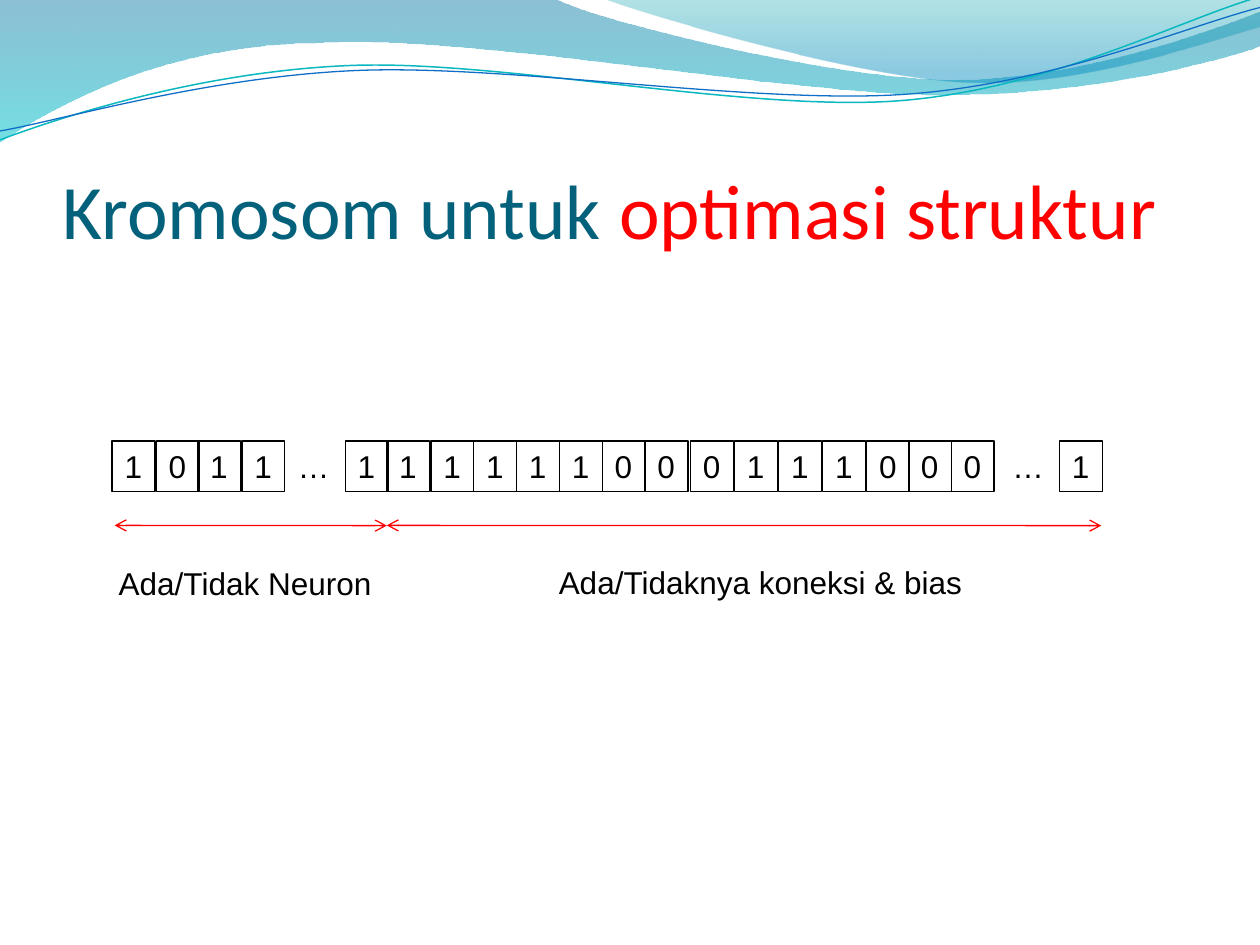
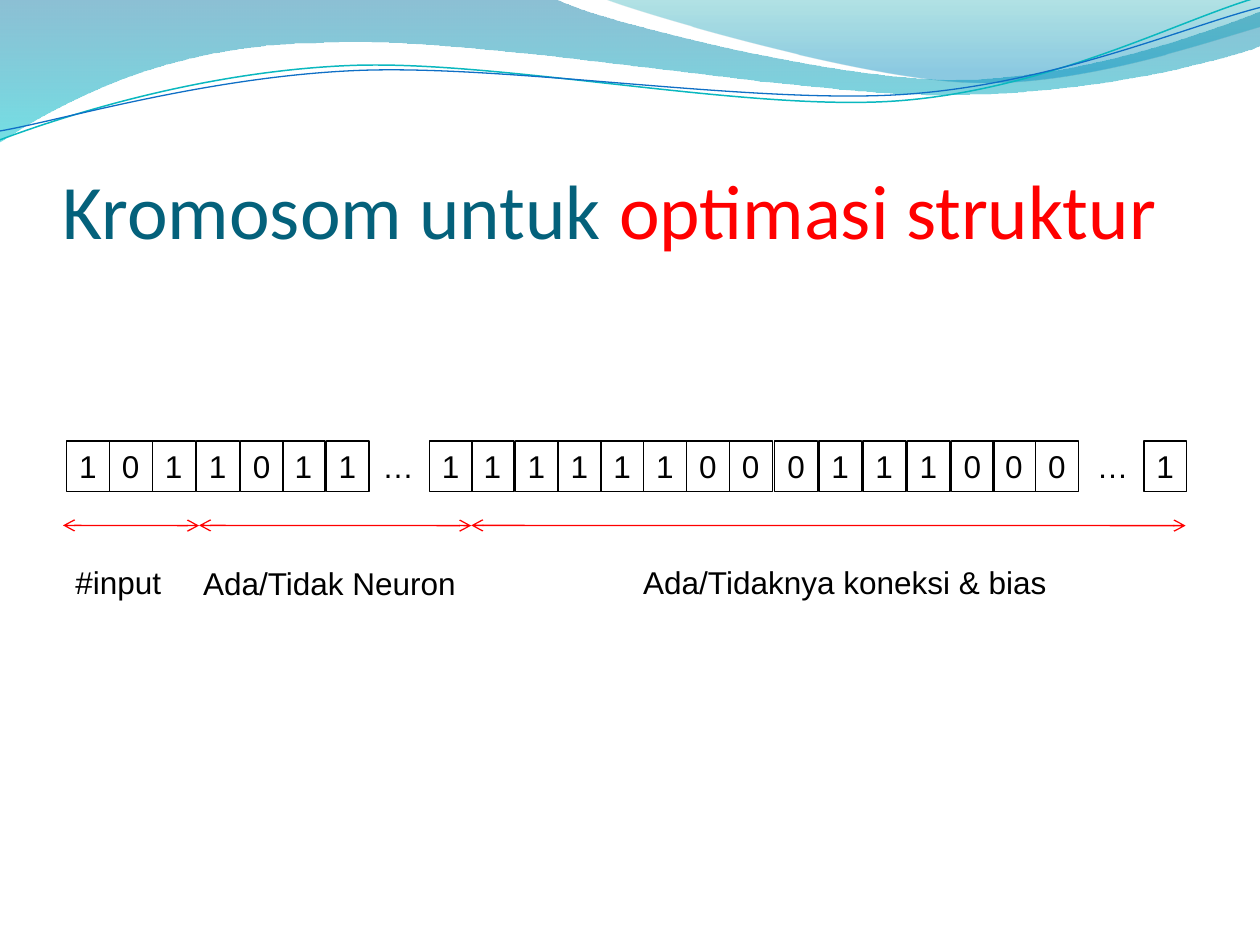
from math import cos, radians, sin

from lxml import etree
from pptx import Presentation
from pptx.dml.color import RGBColor
from pptx.enum.shapes import MSO_CONNECTOR, MSO_SHAPE
from pptx.enum.text import MSO_ANCHOR, MSO_AUTO_SIZE, PP_ALIGN
from pptx.oxml.ns import qn
from pptx.util import Inches, Pt

RECTANGLE = MSO_SHAPE.RECTANGLE
STRAIGHT = MSO_CONNECTOR.STRAIGHT
TOP, BOTTOM = MSO_ANCHOR.TOP, MSO_ANCHOR.BOTTOM
LEFT, CENTER = PP_ALIGN.LEFT, PP_ALIGN.CENTER
FIT_TEXT = MSO_AUTO_SIZE.SHAPE_TO_FIT_TEXT

BLACK = RGBColor(0x00, 0x00, 0x00)
RED = RGBColor(0xFF, 0x00, 0x00)
TITLE_TEAL = RGBColor(0x04, 0x61, 0x7B)
DEEP_BLUE = RGBColor(0x00, 0x74, 0xA1)
TURQUOISE = RGBColor(0x00, 0xC6, 0xCF)
SEA_GREEN = RGBColor(0x00, 0xA1, 0xA9)
SKY_BLUE = RGBColor(0x00, 0x8B, 0xBF)
LINE_TEAL = RGBColor(0x0A, 0xB8, 0xBF)
LINE_BLUE = RGBColor(0x0F, 0x6F, 0xC6)

TITLE = [("Kromosom untuk ", TITLE_TEAL), ("optimasi struktur", RED)]

# Outlines: a start point, then line ends (2 numbers) or Bezier curves (6 numbers).
# Gradient stops: position, colour, opacity in percent.
WAVE_BANDS = [
    ([(0, -0.01), (4.4, -0.01), (4.76, 0.17, 6.64, 0.63, 7.58, 0.63),
      (8.53, 0.63, 9.58, 0.26, 10, 0.09), (10.01, 0.36),
      (9.83, 0.44, 8.7, 0.76, 7.46, 0.75), (6.22, 0.75, 3.82, 0.28, 2.57, 0.34),
      (1.29, 0.35, 0.46, 0.83, -0.01, 1.13), (0, -0.01)],
     [(0, DEEP_BLUE, 45), (1, TURQUOISE, 55)]),
    ([(4.79, -0.01), (5.09, 0.11, 6.82, 0.62, 7.69, 0.65),
      (8.56, 0.69, 9.61, 0.32, 10, 0.21), (10, 0), (4.79, -0.01)],
     [(0, SEA_GREEN, 30), (0.8, SKY_BLUE, 45)]),
]
WAVE_LINES = [  # outline, centre of rotation, colour, width
    ([(0, 1.11), (0.48, 0.93, 1.58, 0.57, 2.77, 0.52),
      (3.95, 0.47, 5.93, 0.89, 7.13, 0.8), (8.33, 0.71, 9.38, 0.15, 9.98, -0.02)],
     (4.99, 0.57), LINE_TEAL, 0.85),
    ([(0, 1.04), (0.47, 0.96, 1.64, 0.61, 2.83, 0.56),
      (4.03, 0.51, 5.97, 0.83, 7.17, 0.75), (8.36, 0.67, 9.41, 0.21, 10, 0.06)],
     (5, 0.59), LINE_BLUE, 0.75),
]
WAVE_TILT = -2.7

# All x values count from the first neuron gene.
NEURON_AND_CONNECTION = {
    "genes": [  # start, pitch, bits
        (0, 0.35, "10"),
        (0.68, 0.35, "11"),
        (1.85, 0.33, "11"),
        (2.53, 0.34, "11110"),
        (4.23, 0.36, "00"),
        (4.94, 0.35, "1110"),
        (6.32, 0.34, "00"),
        (7.52, 0.34, "1"),
    ],
    "ellipses": [1.35, 7.02],
    "spans": [(0.02, 2.18), (2.18, 7.85)],
    "labels": [  # left, top, width, text, alignment
        (-0.07, 4.43, 2.25, "Ada/Tidak Neuron", CENTER),
        (2.77, 4.42, 4.75, "Ada/Tidaknya koneksi & bias", CENTER),
    ],
}
INPUT = {
    "genes": [(-1.03, 0.34, "101")],
    "ellipses": [],
    "spans": [(-1.06, 0.02)],
    "labels": [(-1.06, 4.42, 1.08, "#input", LEFT)],
}
SLIDES = [  # x of the first neuron gene, chromosome parts
    (0.89, [NEURON_AND_CONNECTION]),
    (1.56, [NEURON_AND_CONNECTION, INPUT]),
]

GENE_TOP, GENE_WIDTH, ROW_HEIGHT = 3.5, 0.34, 0.4
ELLIPSIS_WIDTH = 0.5
ARROW_TOP, ARROW_DROP = Inches(4.17), Pt(0.12)


def rotate(point, center, degrees):
    angle = radians(degrees)
    x, y = point[0] - center[0], point[1] - center[1]
    return (center[0] + x * cos(angle) - y * sin(angle),
            center[1] + x * sin(angle) + y * cos(angle))


def add_outline(slide, outline, center=(0, 0), tilt=0):
    """Draw the outline; a tilted one is stored level and then rotated."""
    segments = [list(zip(segment[::2], segment[1::2])) for segment in outline]
    points = [rotate(point, center, -tilt) for segment in segments for point in segment]
    points = [(Inches(x), Inches(y)) for x, y in points]
    builder = slide.shapes.build_freeform(*points[0])
    builder.add_line_segments(points[1:], close=outline[0] == outline[-1])
    shape = builder.convert_to_shape()
    shape.shadow.inherit = False
    shape.rotation = tilt % 360

    line_ends = iter(list(shape.element.spPr.iter(qn("a:lnTo"))))
    for segment in segments[1:]:
        steps = [next(line_ends) for _ in segment]
        if len(steps) == 3:
            curve = etree.Element(qn("a:cubicBezTo"))
            steps[0].addprevious(curve)
            for step in steps:
                curve.append(step[0])
                step.getparent().remove(step)
    return shape


def add_waves(slide):
    for outline, stops in WAVE_BANDS:
        band = add_outline(slide, outline)
        band.line.fill.background()
        band.fill.gradient()
        band.fill.gradient_angle = 270
        for stop, (position, color, _) in zip(band.fill.gradient_stops, stops):
            stop.position = position
            stop.color.rgb = color
        colors = band.element.spPr.iter(qn("a:srgbClr"))
        for color_element, (_, _, opacity) in zip(colors, stops):
            etree.SubElement(color_element, qn("a:alpha"), val=str(opacity * 1000))
    for outline, center, color, width in WAVE_LINES:
        wave = add_outline(slide, outline, center, WAVE_TILT)
        wave.fill.background()
        wave.line.color.rgb = color
        wave.line.width = Pt(width)


def write(shape, runs, size, font, alignment):
    paragraph = shape.text_frame.paragraphs[0]
    paragraph.alignment = alignment
    for text, color in runs:
        run = paragraph.add_run()
        run.text = text
        run.font.size = Pt(size)
        run.font.name = font
        run.font.color.rgb = color


def add_title(slide):
    title = slide.shapes.add_textbox(Inches(0.5), Inches(0.77), Inches(9), Inches(1.25))
    frame = title.text_frame
    frame.word_wrap = True
    frame.vertical_anchor = BOTTOM
    frame.margin_left = frame.margin_right = frame.margin_bottom = 0
    write(title, TITLE, 44, "Calibri", LEFT)


def add_label(slide, left, top, width, text, alignment):
    label = slide.shapes.add_textbox(
        Inches(left), Inches(top), Inches(width), Inches(ROW_HEIGHT))
    label.text_frame.word_wrap = True
    label.text_frame.auto_size = FIT_TEXT
    write(label, [(text, BLACK)], 18, "Arial", alignment)


def add_gene(slide, left, bit):
    gene = slide.shapes.add_shape(
        RECTANGLE, Inches(left), Inches(GENE_TOP), Inches(GENE_WIDTH), Inches(ROW_HEIGHT))
    gene.shadow.inherit = False
    gene.fill.background()
    gene.line.color.rgb = BLACK
    gene.line.width = Pt(0.75)
    gene.text_frame.word_wrap = False
    gene.text_frame.auto_size = FIT_TEXT
    gene.text_frame.vertical_anchor = TOP
    write(gene, [(bit, BLACK)], 18, "Arial", LEFT)


def add_span_arrow(slide, start, end):
    arrow = slide.shapes.add_connector(
        STRAIGHT, Inches(start), ARROW_TOP, Inches(end), ARROW_TOP + ARROW_DROP)
    arrow.line.color.rgb = RED
    arrow.line.width = Pt(0.75)
    line = arrow.element.spPr.find(qn("a:ln"))
    for tag in ("a:headEnd", "a:tailEnd"):
        etree.SubElement(line, qn(tag), type="arrow")
    etree.SubElement(arrow.element.spPr, qn("a:effectLst"))


def add_chromosome_part(slide, origin, part):
    for start, pitch, bits in part["genes"]:
        for index, bit in enumerate(bits):
            add_gene(slide, origin + start + index * pitch, bit)
    for left in part["ellipses"]:
        add_label(slide, origin + left, GENE_TOP, ELLIPSIS_WIDTH, "…", CENTER)
    for start, end in part["spans"]:
        add_span_arrow(slide, origin + start, origin + end)
    for left, *label in part["labels"]:
        add_label(slide, origin + left, *label)


def main():
    presentation = Presentation()
    presentation.slide_width, presentation.slide_height = Inches(10), Inches(7.5)
    for origin, parts in SLIDES:
        slide = presentation.slides.add_slide(presentation.slide_layouts[6])
        add_waves(slide)
        add_title(slide)
        for part in parts:
            add_chromosome_part(slide, origin, part)
    presentation.save("out.pptx")


if __name__ == "__main__":
    main()
